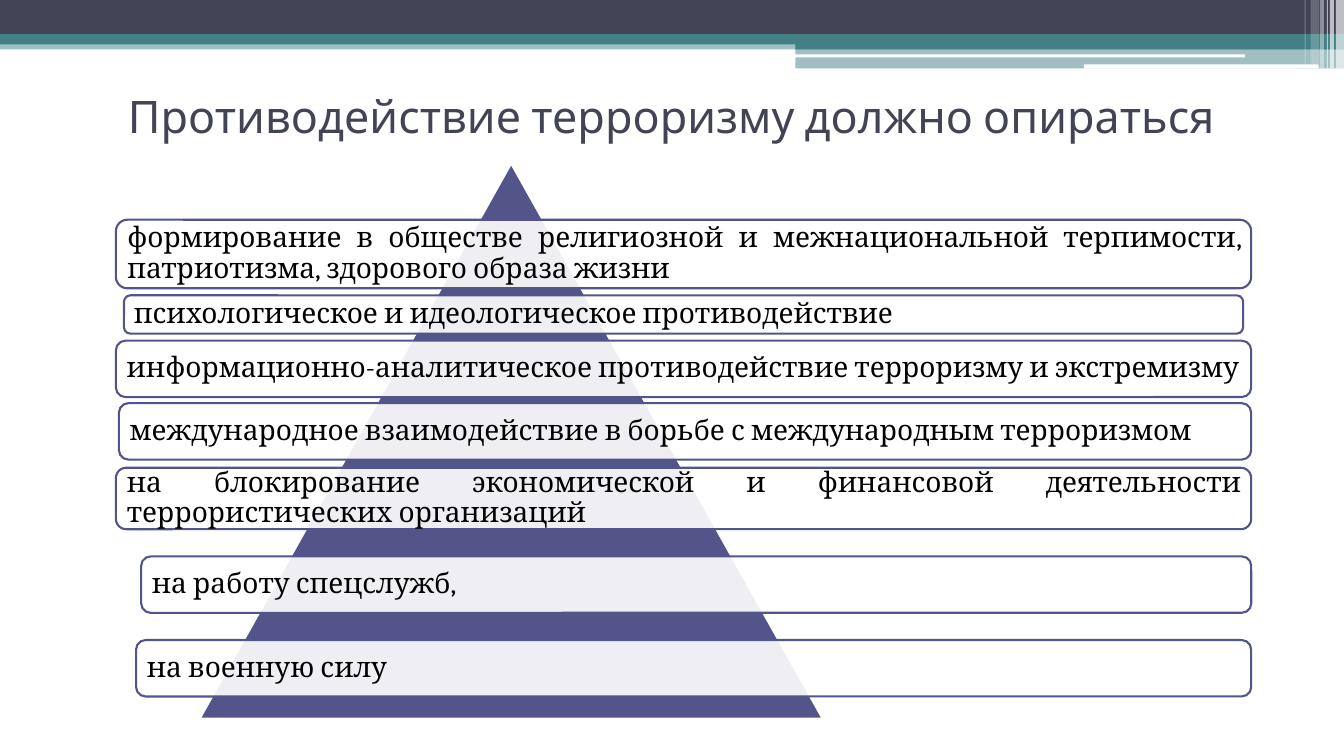
from dataclasses import dataclass

from lxml.etree import SubElement
from pptx import Presentation
from pptx.dml.color import RGBColor
from pptx.enum.shapes import MSO_SHAPE as Shape
from pptx.enum.text import MSO_ANCHOR as Anchor, PP_ALIGN as Align
from pptx.oxml.ns import qn
from pptx.util import Inches, Pt


@dataclass(frozen=True)
class Theme:
    navy: str = "424456"
    teal: str = "438086"
    violet: str = "53548A"
    white: str = "FFFFFF"
    black: str = "000000"
    title_font: str = "Cabin"
    body_font: str = "Cambria"
    title_size: int = 32
    body_size: int = 20
    outline: float = 1.5


class SlideBuilder:
    columns, rows = 13.33, 7.5
    cell = Inches(1)

    def __init__(self, presentation, theme):
        self.theme = theme
        presentation.slide_width = round(self.columns * self.cell)
        presentation.slide_height = round(self.rows * self.cell)
        self.slide = presentation.slides.add_slide(presentation.slide_layouts[6])

    def place(self, *lengths):
        return [round(length * self.cell) for length in lengths]

    def shape(self, kind, box, color, opacity=100, line=None):
        shape = self.slide.shapes.add_shape(kind, *self.place(*box))
        shape.shadow.inherit = False
        shape.fill.solid()
        shape.fill.fore_color.rgb = RGBColor.from_string(color)
        if opacity < 100:
            fill_color = shape.element.spPr.find(qn("a:solidFill"))[0]
            SubElement(fill_color, qn("a:alpha"), val=str(opacity * 1000))
        if line:
            shape.line.color.rgb = RGBColor.from_string(line)
            shape.line.width = Pt(self.theme.outline)
        else:
            shape.line.fill.background()
        return shape

    def label(self, shape, text, font, size, color, align):
        frame = shape.text_frame
        frame.word_wrap = True
        frame.vertical_anchor = Anchor.MIDDLE
        paragraph = frame.paragraphs[0]
        paragraph.text = text
        paragraph.alignment = align
        paragraph.font.name = font
        paragraph.font.size = Pt(size)
        paragraph.font.color.rgb = RGBColor.from_string(color)
        return frame

    def title(self, box, text):
        theme = self.theme
        shape = self.slide.shapes.add_textbox(*self.place(*box))
        self.label(shape, text, theme.title_font, theme.title_size, theme.navy, Align.CENTER)

    def card(self, left, top, right, height, text):
        theme = self.theme
        box = (left, top, right - left, height)
        shape = self.shape(Shape.ROUNDED_RECTANGLE, box, theme.white, 90, theme.violet)
        frame = self.label(shape, text, theme.body_font, theme.body_size, theme.black, Align.JUSTIFY)
        frame.margin_left = frame.margin_top = frame.margin_bottom = Inches(0.08)
        frame.margin_right = Inches(0.07)
        frame.paragraphs[0].line_spacing = 0.9


THEME = Theme()

BANDS = [
    (0, 0.4, 13.33, 0.09, THEME.teal, 50),
    (0, 0, 13.33, 0.34, THEME.navy, 100),
    (0, 0.34, 13.33, 0.1, THEME.teal, 100),
    (7.89, 0.39, 5.44, 0.1, THEME.teal, 100),
    (7.89, 0.48, 5.44, 0.2, THEME.teal, 50),
]
SLOTS = [(7.88, 0.54, 4.47, 0.03), (10.75, 0.64, 2.33, 0.04)]
STRIPES = [
    (13.25, 0.08, 0.68, 65),
    (13.19, 0.04, 0.68, 65),
    (13.16, 0.01, 0.68, 60),
    (13.09, 0.04, 0.68, 40),
    (13, 0.08, 0.64, 20),
    (12.94, 0.01, 0.64, 30),
]
CARDS = [
    (1.15, 2.18, 12.41, 0.68, "формирование в обществе религиозной и межнациональной терпимости, "
                              "патриотизма, здорового образа жизни"),
    (1.23, 2.93, 12.33, 0.38, "психологическое и идеологическое противодействие"),
    (1.15, 3.38, 12.41, 0.56, "информационно-аналитическое противодействие терроризму и экстремизму"),
    (1.18, 4, 12.41, 0.56, "международное взаимодействие в борьбе с международным терроризмом"),
    (1.15, 4.64, 12.41, 0.61, "на блокирование экономической и финансовой деятельности "
                              "террористических организаций"),
    (1.4, 5.52, 12.41, 0.56, "на работу спецслужб,"),
    (1.35, 6.35, 12.41, 0.56, "на военную силу"),
]


def main():
    presentation = Presentation()
    builder = SlideBuilder(presentation, THEME)
    for *box, color, opacity in BANDS:
        builder.shape(Shape.RECTANGLE, box, color, opacity)
    for box in SLOTS:
        builder.shape(Shape.ROUNDED_RECTANGLE, box, THEME.white)
    for left, width, height, opacity in STRIPES:
        builder.shape(Shape.RECTANGLE, (left, 0, width, height), THEME.white, opacity)
    builder.title((0.52, 0.68, 12.28, 0.94), "Противодействие терроризму должно опираться")
    builder.shape(Shape.ISOSCELES_TRIANGLE, (1.98, 1.62, 6.18, 5.51), THEME.violet, line=THEME.white)
    for card in CARDS:
        builder.card(*card)
    presentation.save("out.pptx")


if __name__ == "__main__":
    main()
